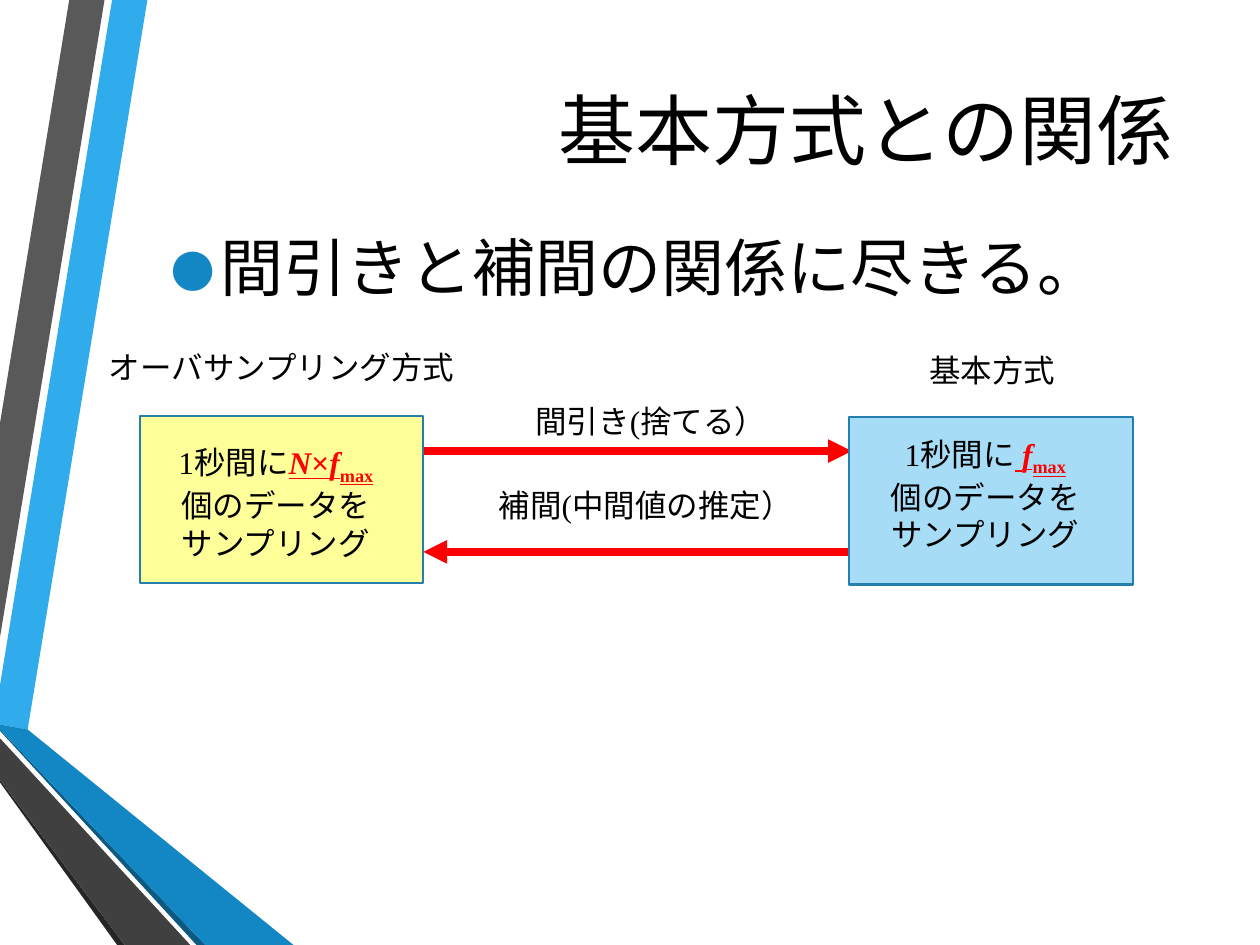
from lxml.etree import SubElement
from pptx import Presentation
from pptx.dml.color import RGBColor
from pptx.enum.shapes import MSO_CONNECTOR, MSO_SHAPE
from pptx.enum.text import MSO_ANCHOR, PP_ALIGN
from pptx.oxml.ns import qn
from pptx.util import Inches, Pt

COLUMNS, ROWS = 100, 75
CELL = Inches(0.1)
BODY_FONT = "Times New Roman"
BLACK, RED, BULLET_BLUE, BORDER = "000000", "FF0000", "1287C3", "247FAF"

RIBBONS = [
    ("30ACEC", [(0, 54.4), (0, 57.5), (2.2, 57.9), (11.7, 0), (8.9, 0)]),
    ("595959", [(8.3, 0), (5.5, 0), (0, 33.6), (0, 50.6)]),
    ("262626", [(0, 61.9), (0, 62.1), (9.3, 75), (9.9, 75)]),
    ("0C5A82", [(0, 57.9), (0, 58), (15.6, 75), (16.3, 75)]),
    (BULLET_BLUE, [(0, 57.9), (16.3, 75), (23.3, 75), (2.2, 57.9), (0, 57.5)]),
    ("404040", [(0, 61.9), (9.9, 75), (15.1, 75), (0, 58.6)]),
]


def grid(*cells):
    """Turn grid columns or rows into slide lengths."""
    return [round(cell * CELL) for cell in cells]


def color(hex_value):
    """Return the colour for a hex string."""
    return RGBColor.from_string(hex_value)


def style(paragraph, size, alignment, font_name=BODY_FONT):
    """Set the shared font and alignment of a paragraph."""
    paragraph.alignment = alignment
    paragraph.font.name = font_name
    paragraph.font.size = Pt(size)
    paragraph.font.color.rgb = color(BLACK)


def place(shape, box):
    """Move a placeholder to a box on the grid."""
    shape.left, shape.top, shape.width, shape.height = grid(*box)


def add_ribbons(slide):
    """Draw the folded ribbons along the left edge."""
    for fill, corners in RIBBONS:
        points = [grid(*corner) for corner in corners]
        builder = slide.shapes.build_freeform(*points[0])
        builder.add_line_segments(points[1:], close=True)
        ribbon = builder.convert_to_shape()
        ribbon.shadow.inherit = False
        ribbon.fill.solid()
        ribbon.fill.fore_color.rgb = color(fill)
        ribbon.line.fill.background()


def fill_title(slide, box, text):
    """Write the right-aligned title."""
    title = slide.shapes.title
    place(title, box)
    title.text_frame.text = text
    title.text_frame.vertical_anchor = MSO_ANCHOR.MIDDLE
    style(title.text_frame.paragraphs[0], 44, PP_ALIGN.RIGHT, "Calibri")


def fill_body(slide, box, text):
    """Write the bulleted statement."""
    body = slide.placeholders[1]
    place(body, box)
    body.text_frame.text = text
    paragraph = body.text_frame.paragraphs[0]
    style(paragraph, 36, PP_ALIGN.LEFT)
    paragraph.space_before, paragraph.space_after = Pt(0), Pt(6)
    properties = paragraph._p.get_or_add_pPr()
    properties.set("marL", str(Inches(0.31)))
    properties.set("indent", str(-Inches(0.31)))
    bullet_color = SubElement(properties, qn("a:buClr"))
    SubElement(bullet_color, qn("a:srgbClr")).set("val", BULLET_BLUE)
    SubElement(properties, qn("a:buSzPct")).set("val", "145000")
    SubElement(properties, qn("a:buChar")).set("char", "●")
    properties.append(properties.find(qn("a:defRPr")))


def add_label(slide, box, lines):
    """Add centred lines of text and return their paragraphs."""
    frame = slide.shapes.add_textbox(*grid(*box)).text_frame
    frame.word_wrap = True
    frame.text = "\n".join(lines)
    for paragraph in frame.paragraphs:
        style(paragraph, 18, PP_ALIGN.CENTER)
    return frame.paragraphs


def add_rate(paragraph, parts):
    """Append the red underlined sampling rate, given as text and kind."""
    for text, kind in parts:
        run = paragraph.add_run()
        run.text = text
        run.font.bold = run.font.underline = True
        run.font.italic = kind == "variable"
        run.font.color.rgb = color(RED)
        if kind == "subscript":
            run._r.get_or_add_rPr().set("baseline", "-25000")


def add_method(slide, box, fill, text_top, rate):
    """Draw one sampling method as a box with its description."""
    left, top, width, height = box
    rectangle = slide.shapes.add_shape(MSO_SHAPE.RECTANGLE, *grid(*box))
    rectangle.shadow.inherit = False
    rectangle.fill.solid()
    rectangle.fill.fore_color.rgb = color(fill)
    rectangle.line.color.rgb = color(BORDER)
    rectangle.line.width = Pt(1.25)
    lines = ["1秒間に", "個のデータを", "サンプリング"]
    paragraphs = add_label(slide, (left + 1, text_top, width - 2.9, 10.1), lines)
    add_rate(paragraphs[0], rate)


def add_arrow(slide, start, end):
    """Draw a thick red arrow between two grid points."""
    arrow = slide.shapes.add_connector(MSO_CONNECTOR.STRAIGHT, *grid(*start, *end))
    arrow.line.color.rgb = color(RED)
    arrow.line.width = Pt(4.5)
    arrow.line._get_or_add_ln().append(
        arrow._element.makeelement(qn("a:tailEnd"), {"type": "triangle"}))
    SubElement(arrow._element.spPr, qn("a:effectLst"))


def add_relation(slide):
    """Draw both methods with the conversions between them."""
    add_arrow(slide, (33.6, 35.8), (67.6, 35.8))
    add_arrow(slide, (67.4, 43.8), (33.6, 43.8))
    maximum = [("f", "variable"), ("max", "subscript")]
    add_method(slide, (11.1, 33, 22.5, 13.3), "FFFF99", 34.7,
               [("N", "variable"), ("×", "plain")] + maximum)
    add_method(slide, (67.4, 33.1, 22.5, 13.3), "A7DCF7", 34,
               [(" ", "plain")] + maximum)
    for box, text in [
        ((7, 27.1, 30.7, 4), "オーバサンプリング方式"),
        ((67.6, 27.4, 22.3, 4), "基本方式"),
        ((39.9, 31.4, 23.5, 4), "間引き(捨てる）"),
        ((34.6, 38.1, 33.3, 4), "補間(中間値の推定）"),
    ]:
        add_label(slide, box, [text])


def main():
    """Build and save the slide."""
    presentation = Presentation()
    presentation.slide_width, presentation.slide_height = grid(COLUMNS, ROWS)
    slide = presentation.slides.add_slide(presentation.slide_layouts[1])
    add_ribbons(slide)
    fill_title(slide, (9.2, 4.6, 85, 11.2), "基本方式との関係")
    fill_body(slide, (12.1, 17.6, 85.8, 9), "間引きと補間の関係に尽きる。")
    add_relation(slide)
    presentation.save("out.pptx")


if __name__ == "__main__":
    main()
